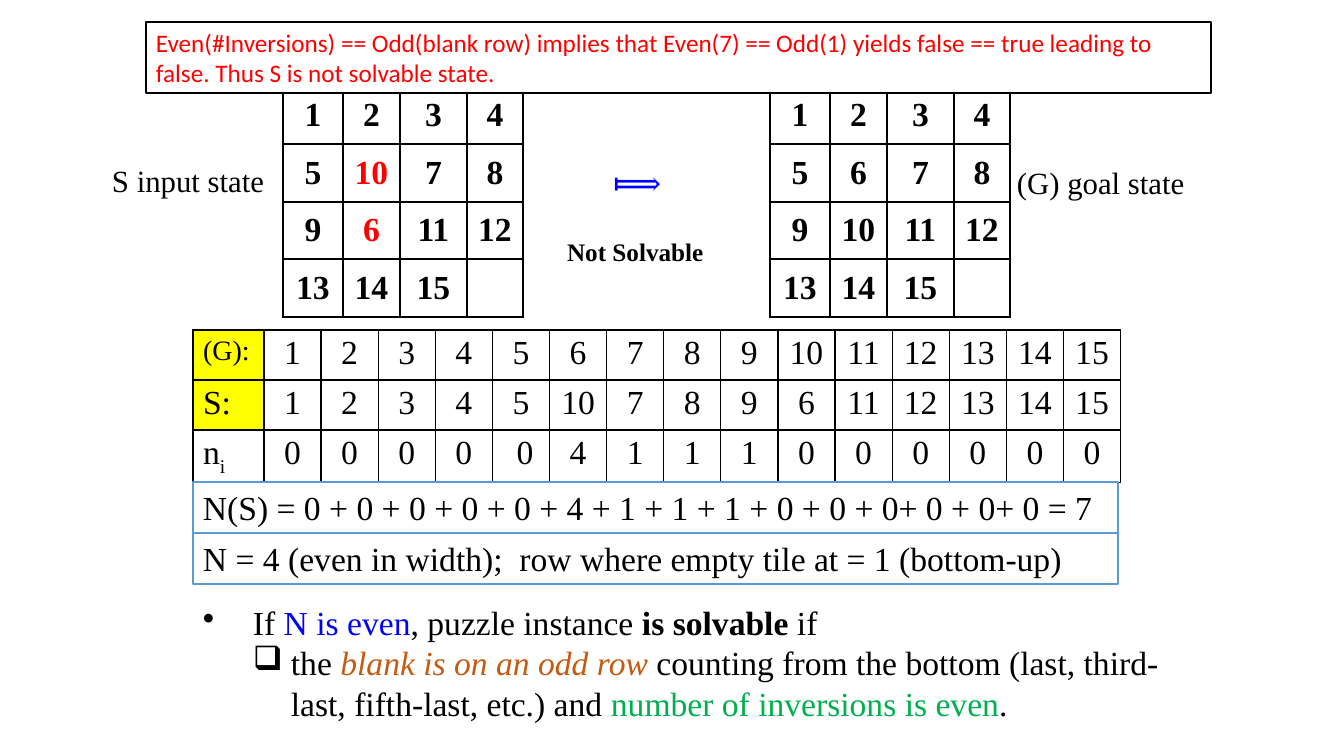
from lxml import etree
from pptx import Presentation
from pptx.dml.color import RGBColor
from pptx.enum.shapes import MSO_SHAPE
from pptx.enum.text import MSO_ANCHOR, PP_ALIGN
from pptx.oxml import parse_xml
from pptx.oxml.ns import nsdecls, qn
from pptx.util import Emu, Pt

BLACK = RGBColor(0x00, 0x00, 0x00)
WHITE = RGBColor(0xFF, 0xFF, 0xFF)
RED = RGBColor(0xFF, 0x00, 0x00)
BLUE = RGBColor(0x00, 0x00, 0xFF)
YELLOW = RGBColor(0xFF, 0xFF, 0x00)
ORANGE = RGBColor(0xC5, 0x5A, 0x11)
GREEN = RGBColor(0x00, 0xB0, 0x50)
STEEL = RGBColor(0x5B, 0x9B, 0xD5)
SERIF, SANS = "Times New Roman", "Calibri"

GOAL = [str(n) for n in range(1, 16)]
START = ["1", "2", "3", "4", "5", "10", "7", "8", "9", "6",
         "11", "12", "13", "14", "15"]
INVERSIONS = ["0", "0", "0", "0", " 0", "4", "1", "1", "1", "0",
              "0", "0", "0", "0", "0"]

# left, tiles
PUZZLES = [(770, GOAL), (283, START)]
PUZZLE_TOP = 87
PUZZLE_COLUMNS = [60, 57, 67, 56]
PUZZLE_ROWS = [57, 58, 57, 58]

# label, label size, subscript, label fill, values
SERIES = [
    ("(G):", 20, "", YELLOW, GOAL),
    ("S:", 24, "", YELLOW, START),
    ("n", 24, "i", WHITE, INVERSIONS),
]
SERIES_LEFT, SERIES_TOP, SERIES_WIDTH = 193, 330, 928
LABEL_WIDTH, SERIES_ROW = 71, 50

# text, box, size, colour, bold, left inset
LABELS = [
    ("⟾", (603, 157, 96, 50), 24, BLUE, False, 10),
    ("S input state", (87, 157, 196, 47), 22, BLACK, False, 25),
    ("(G) goal state", (992, 159, 219, 47), 22, BLACK, False, 25),
    ("Not Solvable", (557, 231, 158, 40), 18, BLACK, True, 10),
]

# text, box, size, font, text colour, line colour
PANELS = [
    ("N(S) = 0 + 0 + 0 + 0 + 0 + 4 + 1 + 1 + 1 + 0 + 0 + 0+ 0 + 0+ 0 = 7",
     (193, 482, 925, 51), 24, SERIF, BLACK, STEEL),
    ("N = 4 (even in width);  row where empty tile at = 1 (bottom-up)",
     (193, 533, 925, 51), 24, SERIF, BLACK, STEEL),
    ("Even(#Inversions) == Odd(blank row) implies that Even(7) == Odd(1) "
     "yields false == true leading to false. Thus S is not solvable state.",
     (146, 22, 1065, 71), 18, SANS, RED, BLACK),
]

RULE_BOX = (193, 597, 979, 132)
# bullet, left indent, hanging indent, tab stop, runs of (text, colour, bold, italic)
RULE = [
    ("•", 50, 50, 50, [
        ("If ", BLACK, False, False),
        ("N is even", BLUE, False, False),
        (", puzzle instance ", BLACK, False, False),
        ("is solvable ", BLACK, True, False),
        ("if", BLACK, False, False),
    ]),
    ("❑", 88, 38, 101, [
        ("the ", BLACK, False, False),
        ("blank is on an odd row ", ORANGE, False, True),
        ("counting from the bottom (last, third-last, fifth-last, etc.) and ",
         BLACK, False, False),
        ("number of inversions is even", GREEN, False, False),
        (".", BLACK, False, False),
    ]),
]


def px(length):
    return Emu(round(length * 914400 / 100.8))


def add_run(paragraph, text, size, color=BLACK, bold=False, italic=False, font=SERIF):
    run = paragraph.add_run()
    run.text = text
    run.font.size = Pt(size)
    run.font.name = font
    run.font.bold = bold
    run.font.italic = italic
    run.font.color.rgb = color
    return run


def add_grid(slide, left, top, columns, rows):
    """Add a plain white table with thin black borders."""
    table = slide.shapes.add_table(len(rows), len(columns), px(left), px(top),
                                   px(sum(columns)), px(sum(rows))).table
    table.first_row = table.horz_banding = False
    for column, width in zip(table.columns, columns):
        column.width = px(width)
    for row, height in zip(table.rows, rows):
        row.height = px(height)
    for cell in table.iter_cells():
        for side in ("lnL", "lnR", "lnT", "lnB"):
            cell._tc.get_or_add_tcPr().append(parse_xml(
                f'<a:{side} {nsdecls("a")} w="12700"><a:solidFill>'
                f'<a:srgbClr val="{BLACK}"/></a:solidFill></a:{side}>'))
        cell.fill.solid()
        cell.fill.fore_color.rgb = WHITE
    return table


def add_number(cell, text, color=BLACK, bold=False):
    paragraph = cell.text_frame.paragraphs[0]
    paragraph.alignment = PP_ALIGN.CENTER
    add_run(paragraph, text, 24, color, bold)


def add_puzzle(slide, left, tiles):
    table = add_grid(slide, left, PUZZLE_TOP, PUZZLE_COLUMNS, PUZZLE_ROWS)
    for cell, tile, home in zip(table.iter_cells(), tiles, GOAL):
        cell.vertical_anchor = MSO_ANCHOR.MIDDLE
        add_number(cell, tile, BLACK if tile == home else RED, bold=True)


def add_series(slide):
    value_width = (SERIES_WIDTH - LABEL_WIDTH) / len(GOAL)
    table = add_grid(slide, SERIES_LEFT, SERIES_TOP,
                     [LABEL_WIDTH] + [value_width] * len(GOAL),
                     [SERIES_ROW] * len(SERIES))
    for r, (label, size, subscript, fill, values) in enumerate(SERIES):
        head = table.cell(r, 0)
        head.fill.fore_color.rgb = fill
        paragraph = head.text_frame.paragraphs[0]
        add_run(paragraph, label, size)
        if subscript:
            index = add_run(paragraph, subscript, size)
            index.font._element.set("baseline", "-25000")
        for c, value in enumerate(values, start=1):
            add_number(table.cell(r, c), value)


def add_text_frame(slide, box):
    frame = slide.shapes.add_textbox(*map(px, box)).text_frame
    frame.word_wrap = True
    return frame


def add_panel(slide, text, box, size, font, color, line_color):
    panel = slide.shapes.add_shape(MSO_SHAPE.RECTANGLE, *map(px, box))
    panel.shadow.inherit = False
    panel.fill.solid()
    panel.fill.fore_color.rgb = WHITE
    panel.line.color.rgb = line_color
    panel.line.width = Pt(1)
    panel.text_frame.word_wrap = True
    paragraph = panel.text_frame.paragraphs[0]
    paragraph.alignment = PP_ALIGN.LEFT
    add_run(paragraph, text, size, color, font=font)


def set_bullet(paragraph, bullet, left, hanging, stop):
    properties = paragraph._p.get_or_add_pPr()
    properties.set("marL", str(px(left)))
    properties.set("indent", str(-px(hanging)))
    etree.SubElement(properties, qn("a:buChar"), char=bullet)
    tabs = etree.SubElement(properties, qn("a:tabLst"))
    etree.SubElement(tabs, qn("a:tab"), pos=str(px(stop)), algn="l")


def add_rule(slide):
    frame = add_text_frame(slide, RULE_BOX)
    for level, (bullet, left, hanging, stop, runs) in enumerate(RULE):
        paragraph = frame.add_paragraph() if level else frame.paragraphs[0]
        paragraph.level = level
        set_bullet(paragraph, bullet, left, hanging, stop)
        for text, color, bold, italic in runs:
            add_run(paragraph, text, 24, color, bold, italic)


def main():
    deck = Presentation()
    deck.slide_width, deck.slide_height = px(1344), px(756)
    slide = deck.slides.add_slide(deck.slide_layouts[6])
    for left, tiles in PUZZLES:
        add_puzzle(slide, left, tiles)
    add_series(slide)
    for text, box, size, color, bold, inset in LABELS:
        frame = add_text_frame(slide, box)
        frame.margin_left = px(inset)
        add_run(frame.paragraphs[0], text, size, color, bold)
    add_rule(slide)
    for panel in PANELS:
        add_panel(slide, *panel)
    deck.save("out.pptx")


if __name__ == "__main__":
    main()
